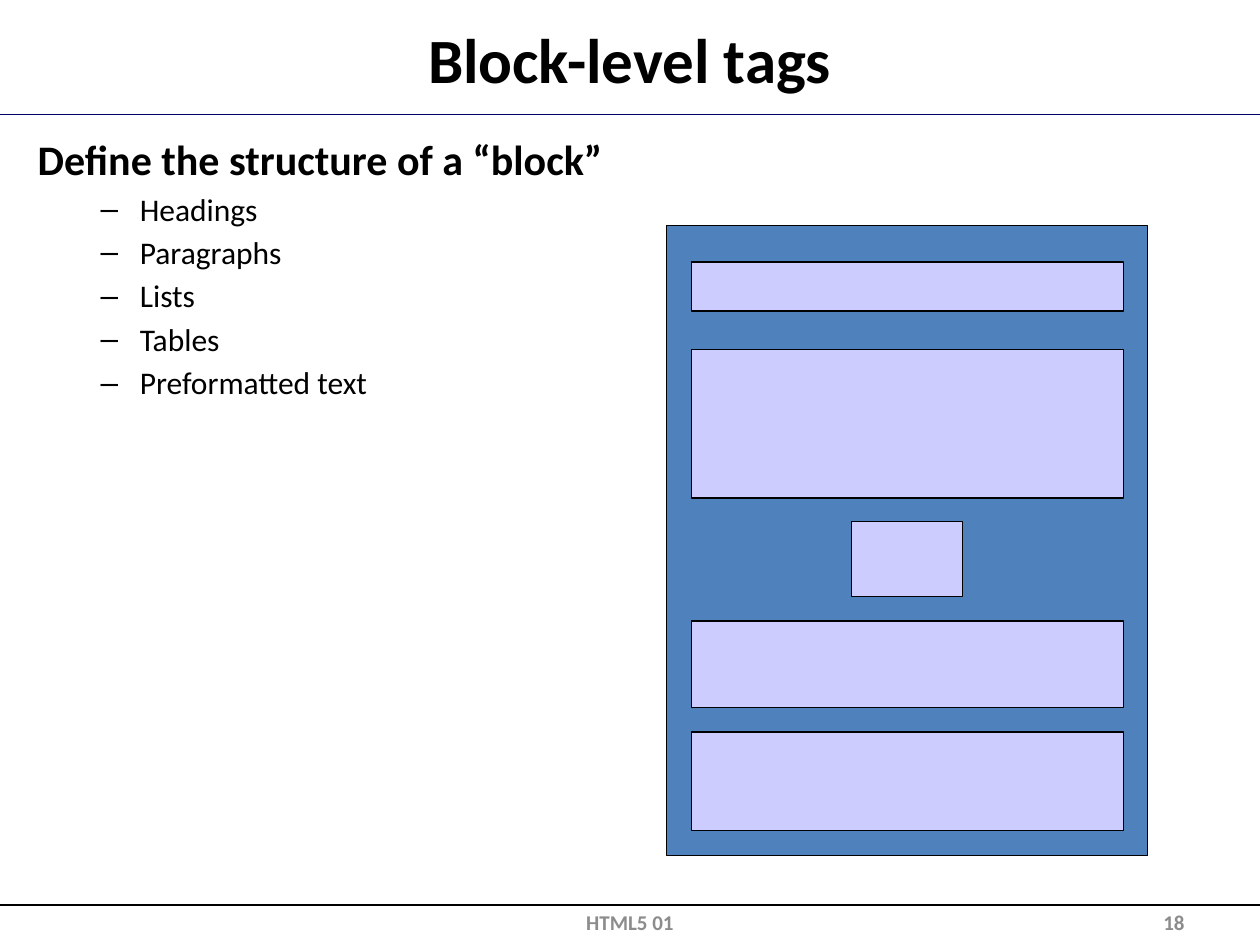
"""Build the slide on block-level tags."""
from lxml import etree
from pptx import Presentation
from pptx import util as u
from pptx.dml.color import RGBColor
from pptx.enum import shapes, text
from pptx.oxml.ns import qn

COLOURS = {"black": "000000", "navy": "000066", "frame": "4F81BD",
           "block": "CCCCFF", "grey": "8C8C8C"}
FONT = "Calibri"
WIDTH, HEIGHT = 25.4, 19.05
FRAME_LEFT, FRAME_WIDTH = 13.44, 9.7
BLOCKS = [(5.28, 8.71, 0.99), (7.04, 8.71, 3), (10.52, 2.24, 1.5),
          (12.52, 8.71, 1.75), (14.76, 8.71, 1.98)]
ITEMS = ["Headings", "Paragraphs", "Lists", "Tables", "Preformatted text"]


def colour(name):
    """Return the named colour."""
    return RGBColor.from_string(COLOURS[name])


def add_box(page, left, top, width, height, anchor=text.MSO_ANCHOR.MIDDLE):
    """Add a wrapping text box and return its text frame."""
    box = page.shapes.add_textbox(u.Cm(left), u.Cm(top), u.Cm(width), u.Cm(height))
    frame = box.text_frame
    frame.word_wrap = True
    frame.vertical_anchor = anchor
    return frame


def write(para, words, size, bold=True, ink="black", align=text.PP_ALIGN.LEFT):
    """Write words into a paragraph with the given format."""
    para.alignment = align
    span = para.add_run()
    span.text = words
    span.font.name = FONT
    span.font.size = u.Pt(size)
    span.font.bold = bold
    span.font.color.rgb = colour(ink)


def add_bullet(para, left, hanging, mark):
    """Give a paragraph a hanging bullet."""
    props = para._p.get_or_add_pPr()
    props.set("marL", str(u.Cm(left)))
    props.set("indent", str(-u.Cm(hanging)))
    etree.SubElement(props, qn("a:buFont")).set("typeface", "Arial")
    etree.SubElement(props, qn("a:buChar")).set("char", mark)


def add_rule(page, top, ink):
    """Draw a line across the whole page."""
    rule = page.shapes.add_connector(
        shapes.MSO_CONNECTOR.STRAIGHT, 0, u.Cm(top), u.Cm(WIDTH), u.Cm(top))
    rule.line.color.rgb = colour(ink)
    rule.line.width = u.Pt(1)
    etree.SubElement(rule._element.spPr, qn("a:effectLst"))


def add_block(page, left, top, width, height, fill):
    """Draw an outlined rectangle."""
    block = page.shapes.add_shape(
        shapes.MSO_SHAPE.RECTANGLE, u.Cm(left), u.Cm(top), u.Cm(width), u.Cm(height))
    block.shadow.inherit = False
    block.fill.solid()
    block.fill.fore_color.rgb = colour(fill)
    block.line.color.rgb = colour("black")
    block.line.width = u.Pt(0.75)


def add_list(page):
    """Add the heading and its dashed items."""
    frame = add_box(page, 0.51, 2.57, 24.38, 15.19, text.MSO_ANCHOR.TOP)
    write(frame.paragraphs[0], "Define the structure of a “block”", 24)
    for item in ITEMS:
        para = frame.add_paragraph()
        add_bullet(para, 2.06, 0.79, "–")
        para.level = 1
        para.space_before = u.Pt(3.2)
        write(para, item, 18, bold=False)


def add_diagram(page):
    """Draw the frame with its blocks centred inside."""
    add_block(page, FRAME_LEFT, 4.55, FRAME_WIDTH, 12.7, "frame")
    for top, width, height in BLOCKS:
        left = FRAME_LEFT + (FRAME_WIDTH - width) / 2
        add_block(page, left, top, width, height, "block")


def main():
    """Build and save the deck."""
    deck = Presentation()
    deck.slide_width, deck.slide_height = u.Cm(WIDTH), u.Cm(HEIGHT)
    page = deck.slides.add_slide(deck.slide_layouts[6])
    add_rule(page, 2.31, "navy")
    add_rule(page, 18.24, "black")
    title = add_box(page, 0.25, 0.3, 24.89, 1.75)
    write(title.paragraphs[0], "Block-level tags", 36, align=text.PP_ALIGN.CENTER)
    add_list(page)
    add_diagram(page)
    number = add_box(page, 18.21, 18.24, 5.92, 0.69)
    write(number.paragraphs[0], "18", 12, ink="grey", align=text.PP_ALIGN.RIGHT)
    footer = add_box(page, 8.68, 18.24, 8.04, 0.69)
    write(footer.paragraphs[0], "HTML5 01", 12, ink="grey", align=text.PP_ALIGN.CENTER)
    deck.save("out.pptx")


if __name__ == "__main__":
    main()
